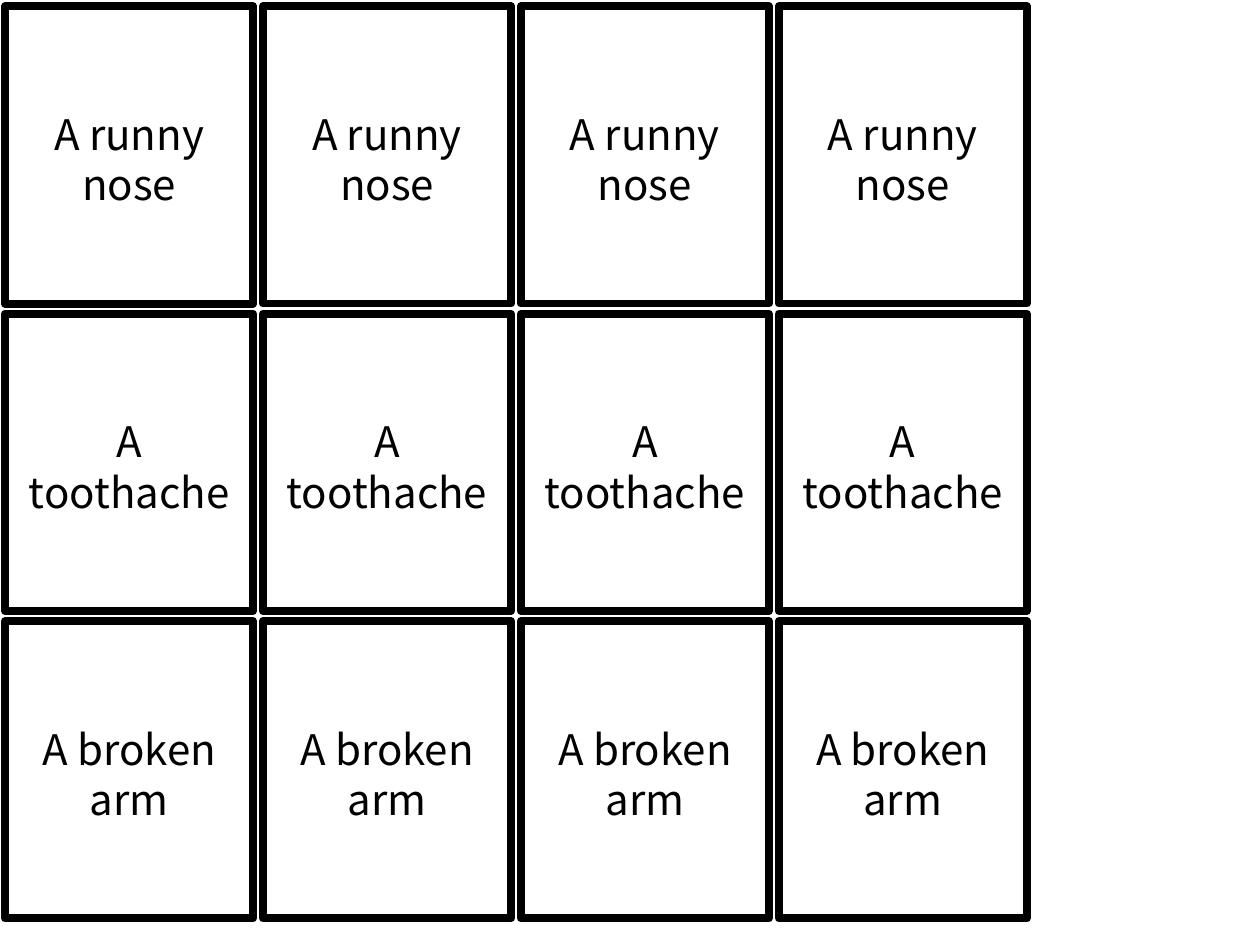
import pptx
import pptx.dml.color
import pptx.enum.shapes
import pptx.enum.text
import pptx.oxml.ns
import pptx.util
from lxml import etree
from pptx.util import Inches

COLORS = {"paper": "FFFFFF", "ink": "000000"}
paper, ink = (pptx.dml.color.RGBColor.from_string(COLORS[name]) for name in ("paper", "ink"))

AILMENTS = ["A runny nose", "A toothache", "A broken arm"]
COPIES = 4

# Card grid
CARD_WIDTH, CARD_HEIGHT = 1.97, 2.36
LEFT, TOP, LAST_LEFT = 0.04, 0.05, 6.18
COLUMN_STEP = (LAST_LEFT - LEFT) / (COPIES - 1)
ROW_STEP = 2.44

# Text formats
FRAME_FORMAT = {
    "word_wrap": True,
    "auto_size": pptx.enum.text.MSO_AUTO_SIZE.NONE,
    "vertical_anchor": pptx.enum.text.MSO_ANCHOR.MIDDLE,
    "margin_left": Inches(0.1),
    "margin_right": Inches(0.1),
    "margin_top": Inches(0.11),
    "margin_bottom": Inches(0.05),
}
PARAGRAPH_FORMAT = {
    "alignment": pptx.enum.text.PP_ALIGN.CENTER,
    "line_spacing": pptx.util.Pt(28.8),
}
FONT_FORMAT = {"name": "Noto Sans CJK KR", "size": pptx.util.Pt(24)}


def apply_format(target, values):
    for attribute, value in values.items():
        setattr(target, attribute, value)


# Slide
deck = pptx.Presentation()
deck.slide_width, deck.slide_height = Inches(10), Inches(7.5)
slide = deck.slides.add_slide(deck.slide_layouts[5])

# Cards: one ailment per row, the first card is the title
for row, ailment in enumerate(AILMENTS):
    for column in range(COPIES):
        place = {
            "left": Inches(LEFT + column * COLUMN_STEP),
            "top": Inches(TOP + row * ROW_STEP),
            "width": Inches(CARD_WIDTH),
            "height": Inches(CARD_HEIGHT),
        }
        if row == column == 0:
            card = slide.shapes.title
            apply_format(card, place)
        else:
            card = slide.shapes.add_shape(
                pptx.enum.shapes.MSO_SHAPE.RECTANGLE, **place)
            card.shadow.inherit = False

        # Paper and border with rounded corners
        card.fill.solid()
        card.fill.fore_color.rgb = paper
        card.line.color.rgb = ink
        card.line.width = pptx.util.Pt(4.5)
        border = card.line.fill._xPr
        etree.SubElement(border, pptx.oxml.ns.qn("a:round"))

        # Wording
        card.text_frame.text = ailment
        apply_format(card.text_frame, FRAME_FORMAT)
        wording = card.text_frame.paragraphs[0]
        apply_format(wording, PARAGRAPH_FORMAT)
        font = wording.runs[0].font
        apply_format(font, FONT_FORMAT)
        font.color.rgb = ink

deck.save("out.pptx")
